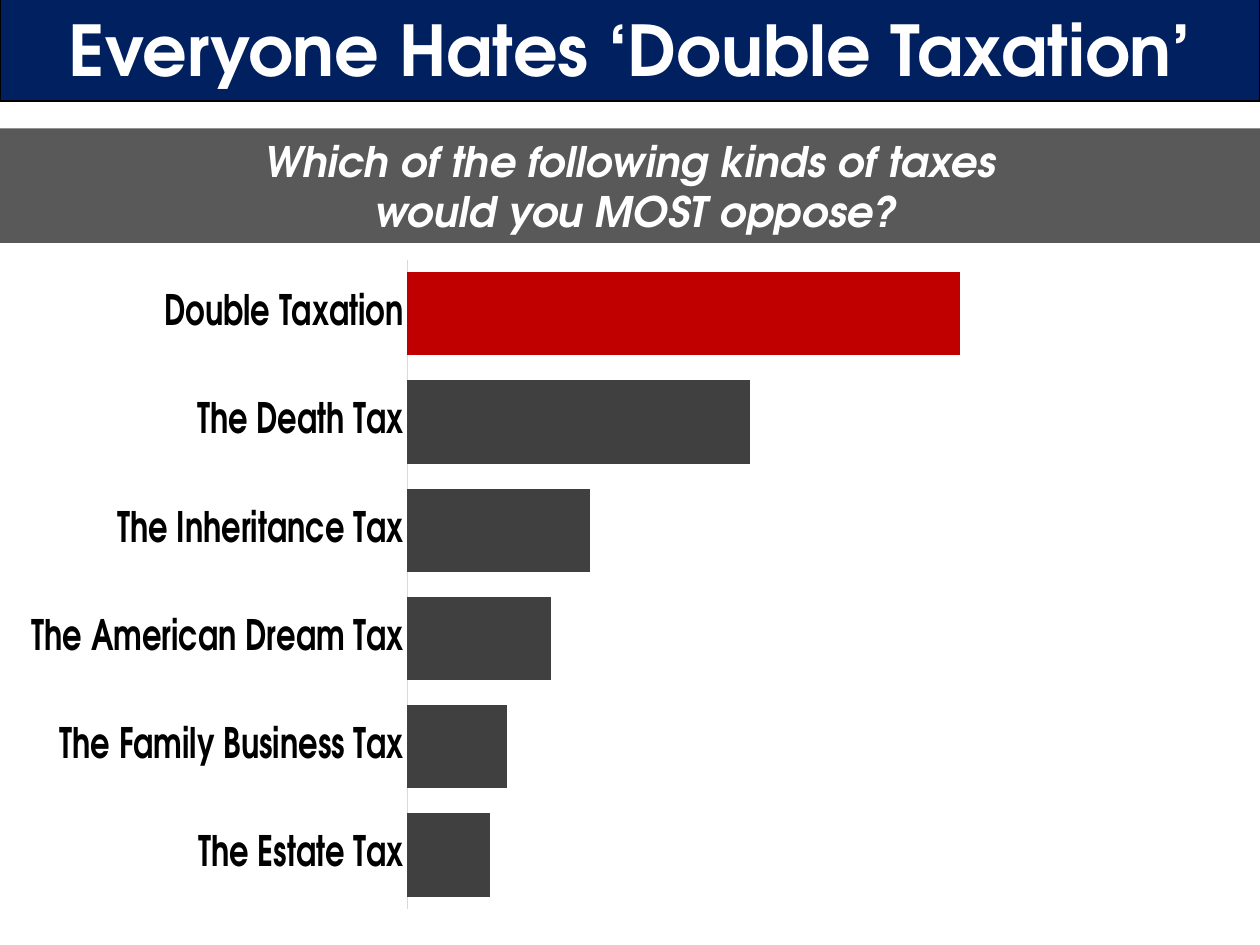
"""Build a one-slide deck with a bar chart of the most opposed kinds of taxes."""
from lxml import etree
from pptx import Presentation
from pptx.chart.data import CategoryChartData
from pptx.dml.color import RGBColor
from pptx.enum.chart import XL_CHART_TYPE as ChartType, XL_TICK_LABEL_POSITION as LabelPos, XL_TICK_MARK as Tick
from pptx.enum.shapes import MSO_SHAPE as Shape
from pptx.enum.text import MSO_ANCHOR as Anchor, MSO_AUTO_SIZE as AutoSize, PP_ALIGN as Align
from pptx.oxml.ns import qn
from pptx.util import Cm, Pt

COLORS = {
    "navy": "002060",
    "banner": "595959",
    "bar": "404040",
    "highlight": "C00000",
    "axis": "D9D9D9",
    "black": "000000",
    "white": "FFFFFF",
}
TAXES = {
    "Double Taxation": 100,
    "The Death Tax": 62,
    "The Inheritance Tax": 33,
    "The American Dream Tax": 26,
    "The Family Business Tax": 18,
    "The Estate Tax": 15,
}
PLOT_LAYOUT = {"x": 0.006, "y": 0.025, "w": 0.719, "h": 0.975}


class SlideBuilder:
    font = "TeX Gyre Adventor"
    chart_font = "Calibri"

    def __init__(self, prs):
        self.slide = prs.slides.add_slide(prs.slide_layouts[5])

    def color(self, name):
        return RGBColor.from_string(COLORS[name])

    def paint(self, fill, name):
        fill.solid()
        fill.fore_color.rgb = self.color(name)

    def style_font(self, font, size, color, italic=False):
        font.name, font.size, font.bold, font.italic = self.font, Pt(size), True, italic
        font.color.rgb = self.color(color)

    def set_text(self, sp, lines, size, italic=False):
        tf = sp.text_frame
        tf.text = "\n".join(lines)
        tf.word_wrap = True
        tf.auto_size = AutoSize.SHAPE_TO_FIT_TEXT
        tf.vertical_anchor = Anchor.MIDDLE
        for p in tf.paragraphs:
            p.alignment = Align.CENTER
            self.style_font(p.font, size, "white", italic)

    def title(self, text, left, top, width, height):
        sp = self.slide.shapes.title
        sp.left, sp.top, sp.width, sp.height = left, top, width, height
        self.paint(sp.fill, "navy")
        sp.line.color.rgb = self.color("black")
        sp.line.width = Pt(0.75)
        self.set_text(sp, [text], 40)

    def banner(self, lines, *box):
        sp = self.slide.shapes.add_shape(Shape.RECTANGLE, *box)
        sp.shadow.inherit = False
        self.paint(sp.fill, "banner")
        sp.line.fill.background()
        self.set_text(sp, lines, 24, italic=True)

    def bar_chart(self, values, highlight, *box):
        data = CategoryChartData(number_format="0")
        data.categories = list(values)
        data.add_series("Series 1", list(values.values()))
        chart = self.slide.shapes.add_chart(ChartType.BAR_CLUSTERED, *box, data).chart
        chart.has_legend = chart.has_title = False
        chart.font.name, chart.font.size = self.chart_font, Pt(10)
        chart.font.color.rgb = self.color("black")

        plot = chart.plots[0]
        plot.gap_width = 30
        plot.vary_by_categories = False
        series = plot.series[0]
        self.paint(series.format.fill, "bar")
        self.paint(series.points[list(values).index(highlight)].format.fill, "highlight")

        cat = chart.category_axis
        cat.reverse_order = True
        cat.major_tick_mark = cat.minor_tick_mark = Tick.NONE
        cat.tick_label_position = LabelPos.NEXT_TO_AXIS
        cat.format.line.color.rgb = self.color("axis")
        cat.format.line.width = Pt(0.75)
        self.style_font(cat.tick_labels.font, 24, "black")

        val = chart.value_axis
        val.minimum_scale, val.maximum_scale = 0, 128
        val.has_major_gridlines = False
        val.visible = False
        self.place_plot(chart)

    def place_plot(self, chart):
        area = chart.plots[0]._element.getparent()
        for old in area.findall(qn("c:layout")):
            area.remove(old)
        layout = etree.Element(qn("c:layout"))
        area.insert(0, layout)
        manual = etree.SubElement(layout, qn("c:manualLayout"))
        settings = {"layoutTarget": "inner", "xMode": "edge", "yMode": "edge", **PLOT_LAYOUT}
        for tag, value in settings.items():
            etree.SubElement(manual, qn(f"c:{tag}")).set("val", str(value))


def main():
    prs = Presentation()
    prs.slide_width, prs.slide_height = Cm(25.4), Cm(19.05)
    s = SlideBuilder(prs)
    s.title("Everyone Hates ‘Double Taxation’", 0, 0, prs.slide_width, Cm(1.96))
    s.banner(
        ["Which of the following kinds of taxes", " would you MOST oppose?"],
        0, Cm(2.59), prs.slide_width, Cm(2.31),
    )
    s.bar_chart(TAXES, "Double Taxation", Cm(0.64), Cm(4.9), Cm(27.3), Cm(13.44))
    prs.save("out.pptx")


if __name__ == "__main__":
    main()
